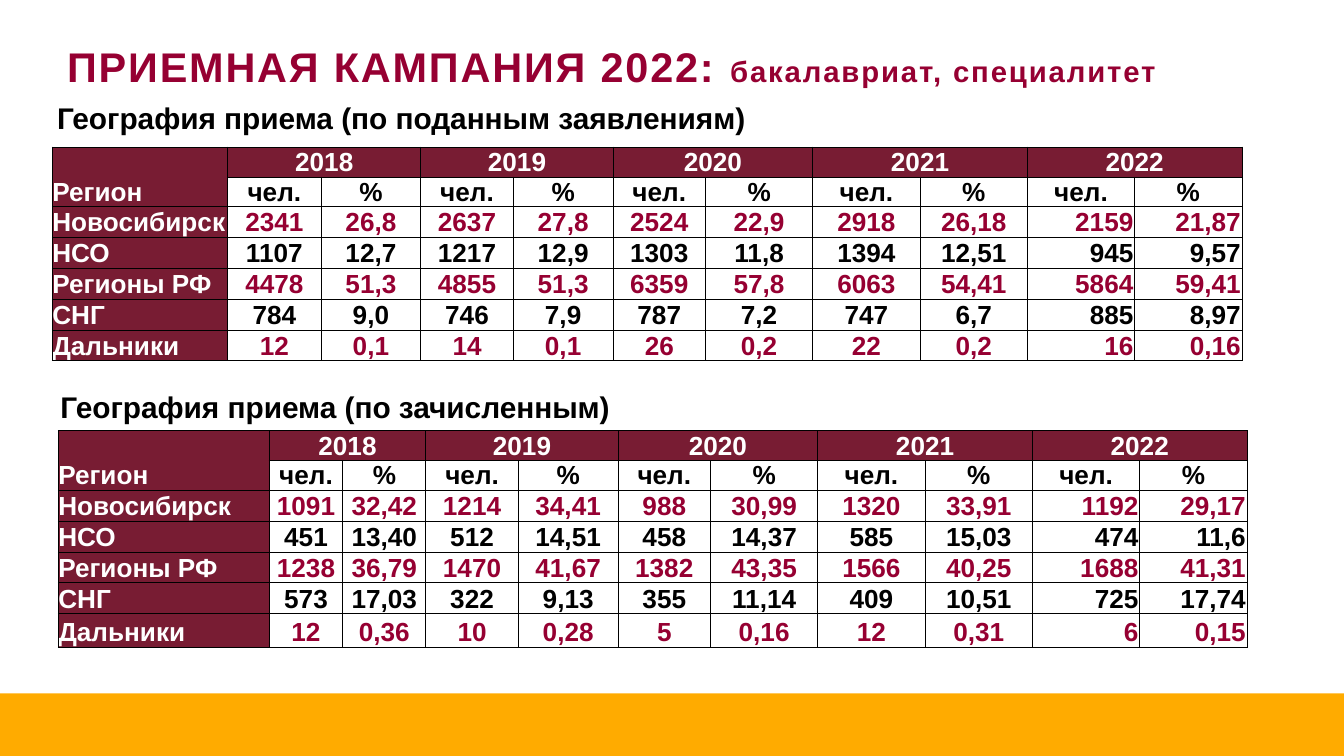
import dataclasses

import lxml.etree
import pptx
import pptx.dml.color
import pptx.enum.shapes
import pptx.enum.text
import pptx.oxml.ns
import pptx.util

Pt = pptx.util.Pt
ALIGN = pptx.enum.text.PP_ALIGN
ANCHOR = pptx.enum.text.MSO_ANCHOR


@dataclasses.dataclass(frozen=True)
class Theme:
    """Colours, font and type sizes of the deck."""

    font: str = "Arial"
    accent: str = "960032"
    header: str = "781C33"
    bar: str = "FFAB00"
    dark: str = "000000"
    light: str = "FFFFFF"
    title_size: float = 22.2
    subtitle_size: float = 15.7
    heading_size: float = 16
    table_size: float = 14
    border: float = 0.5
    spacing: float = 1


THEME = Theme()
YEARS = ["2018", "2019", "2020", "2021", "2022"]
SHARED_WIDTHS = [49.5, 53.5, 49.5] + [57.5] * 5
ROW_HEIGHTS = [16, 16] + [16.5] * 4

APPLICATIONS = [
    ["Новосибирск", "2341", "26,8", "2637", "27,8", "2524", "22,9", "2918", "26,18", "2159", "21,87"],
    ["НСО", "1107", "12,7", "1217", "12,9", "1303", "11,8", "1394", "12,51", "945", "9,57"],
    ["Регионы РФ", "4478", "51,3", "4855", "51,3", "6359", "57,8", "6063", "54,41", "5864", "59,41"],
    ["СНГ", "784", "9,0", "746", "7,9", "787", "7,2", "747", "6,7", "885", "8,97"],
    ["Дальники", "12", "0,1", "14", "0,1", "26", "0,2", "22", "0,2", "16", "0,16"],
]
ENROLLED = [
    ["Новосибирск", "1091", "32,42", "1214", "34,41", "988", "30,99", "1320", "33,91", "1192", "29,17"],
    ["НСО", "451", "13,40", "512", "14,51", "458", "14,37", "585", "15,03", "474", "11,6"],
    ["Регионы РФ", "1238", "36,79", "1470", "41,67", "1382", "43,35", "1566", "40,25", "1688", "41,31"],
    ["СНГ", "573", "17,03", "322", "9,13", "355", "11,14", "409", "10,51", "725", "17,74"],
    ["Дальники", "12", "0,36", "10", "0,28", "5", "0,16", "12", "0,31", "6", "0,15"],
]


def rgb(code):
    """Turn a hex code into a colour."""
    return pptx.dml.color.RGBColor.from_string(code)


def add_span(para, text, size, color):
    """Append one bold run to a paragraph and return it."""
    span = para.add_run()
    span.text = text
    span.font.name = THEME.font
    span.font.size = Pt(size)
    span.font.bold = True
    span.font.color.rgb = rgb(color)
    return span


def add_bar(page, left, top, width, height):
    """Draw the coloured bar along the foot of the page."""
    bar = page.shapes.add_shape(
        pptx.enum.shapes.MSO_SHAPE.RECTANGLE, Pt(left), Pt(top), Pt(width), Pt(height)
    )
    bar.shadow.inherit = False
    bar.fill.solid()
    bar.fill.fore_color.rgb = rgb(THEME.bar)
    bar.line.fill.background()


def add_title(page, left, top, width, height):
    """Place the two-size title in the title placeholder."""
    title = page.shapes.title
    title.left, title.top, title.width, title.height = Pt(left), Pt(top), Pt(width), Pt(height)
    frame = title.text_frame
    frame.word_wrap = True
    frame.auto_size = pptx.enum.text.MSO_AUTO_SIZE.NONE
    frame.vertical_anchor = ANCHOR.MIDDLE
    frame.margin_left = frame.margin_right = Pt(7.2)
    frame.margin_top, frame.margin_bottom = Pt(12), Pt(3.6)
    para = frame.paragraphs[0]
    para.alignment = ALIGN.LEFT
    parts = [
        ("ПРИЕМНАЯ КАМПАНИЯ 2022: ", THEME.title_size),
        ("бакалавриат, специалитет", THEME.subtitle_size),
    ]
    for text, size in parts:
        span = add_span(para, text, size, THEME.accent)
        span._r.get_or_add_rPr().set("spc", str(round(THEME.spacing * 100)))


def add_heading(page, text, left, top, width, height):
    """Place a heading above a table."""
    box = page.shapes.add_textbox(Pt(left), Pt(top), Pt(width), Pt(height))
    box.text_frame.word_wrap = True
    add_span(box.text_frame.paragraphs[0], text, THEME.heading_size, THEME.dark)


def style_cell(cell, filled):
    """Give a cell its borders, margins and fill."""
    properties = cell._tc.get_or_add_tcPr()
    qn = pptx.oxml.ns.qn
    for side in ("a:lnL", "a:lnR", "a:lnT", "a:lnB"):
        line = lxml.etree.SubElement(properties, qn(side), w=str(Pt(THEME.border)))
        fill = lxml.etree.SubElement(line, qn("a:solidFill"))
        lxml.etree.SubElement(fill, qn("a:srgbClr"), val=THEME.dark)
    cell.margin_left = cell.margin_right = cell.margin_top = cell.margin_bottom = 0
    cell.vertical_anchor = ANCHOR.BOTTOM
    if filled:
        cell.fill.solid()
        cell.fill.fore_color.rgb = rgb(THEME.header)
    else:
        cell.fill.background()


def add_region_table(page, records, left, top, widths, heights):
    """Build a table of people and shares by region and year."""
    year_row = ["Регион"]
    for year in YEARS:
        year_row += [year, ""]
    rows = [year_row, [""] + ["чел.", "%"] * len(YEARS)] + records
    table = page.shapes.add_table(
        len(rows), len(widths), Pt(left), Pt(top), Pt(sum(widths)), Pt(sum(heights))
    ).table
    table.first_row = table.horz_banding = False
    for column, width in zip(table.columns, widths):
        column.width = Pt(width)
    for row, height in zip(table.rows, heights):
        row.height = Pt(height)
    for r, texts in enumerate(rows):
        for c, text in enumerate(texts):
            cell = table.cell(r, c)
            filled = r == 0 or c == 0
            style_cell(cell, filled)
            para = cell.text_frame.paragraphs[0]
            para.alignment = ALIGN.LEFT if c == 0 else ALIGN.CENTER
            if r > 1 and c >= len(widths) - 2:
                para.alignment = ALIGN.RIGHT
                cell.margin_right = Pt(0.7)
            body_color = THEME.accent if r > 1 and r % 2 == 0 else THEME.dark
            if text:
                add_span(para, text, THEME.table_size, THEME.light if filled else body_color)
    table.cell(0, 0).merge(table.cell(1, 0))
    for c in range(1, len(widths), 2):
        table.cell(0, c).merge(table.cell(0, c + 1))


def build_admission_page(deck):
    """Lay out the page with both admission tables."""
    page = deck.slides.add_slide(deck.slide_layouts[5])
    add_bar(page, 0, 371.5, 720, 33.5)
    add_region_table(page, APPLICATIONS, 28, 78.8, [94, 50, 53.5] + SHARED_WIDTHS, ROW_HEIGHTS + [16.5])
    add_region_table(page, ENROLLED, 31.2, 230.8, [113, 39.5, 44.5] + SHARED_WIDTHS, ROW_HEIGHTS + [18])
    add_heading(page, "География приема (по поданным заявлениям)", 23.5, 50, 571, 26.6)
    add_heading(page, "География приема (по зачисленным)", 25.3, 204.8, 571, 26.6)
    add_title(page, 28.8, 5.8, 641, 51)


def main():
    """Create and save the deck."""
    deck = pptx.Presentation()
    deck.slide_width, deck.slide_height = Pt(720), Pt(405)
    build_admission_page(deck)
    deck.save("out.pptx")


if __name__ == "__main__":
    main()
